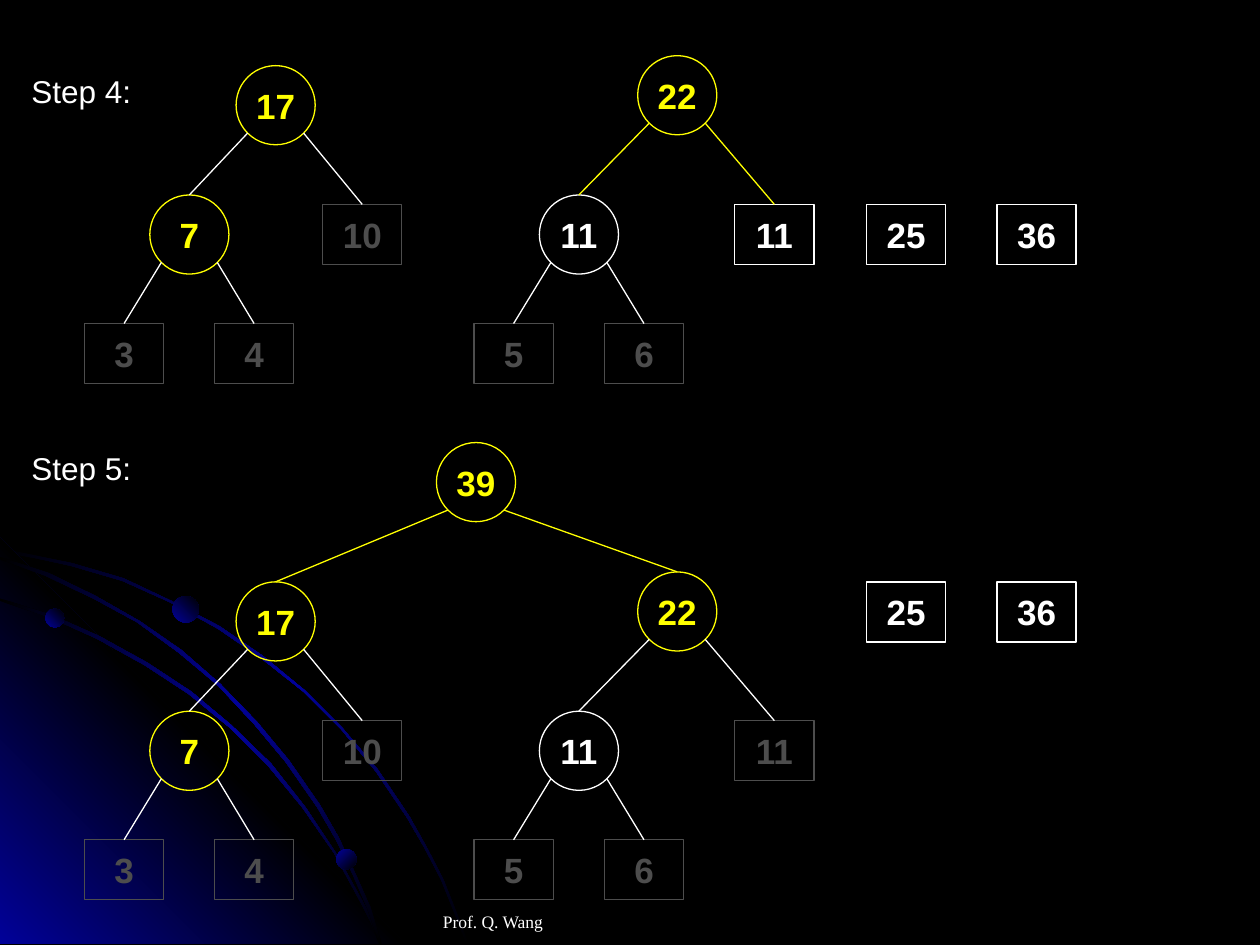
from copy import deepcopy

from lxml import etree
from pptx import Presentation
from pptx.dml.color import RGBColor
from pptx.enum import shapes as kinds, text as t
from pptx.oxml.ns import qn
from pptx.util import Pt

THEME = {
    "background": "000000", "glow": "010199", "white": "FFFFFF",
    "yellow": "FFFF00", "grey": "4D4D4D", "line": 0.75,
    "sans": "Arial", "serif": "Times New Roman",
    "label": 18, "node": 20, "footer": 10,
}
NODE_WIDTH, LEAF_HEIGHT = 45.2, 34.2
DIAGONAL = 0.5 ** 0.5
OVAL, RECT = kinds.MSO_SHAPE.OVAL, kinds.MSO_SHAPE.RECTANGLE

# Tree nodes: key -> (weight, centre x, top), tops as in step 4
INNER = {
    "a": ("7", 108.2, 111.4), "b": ("11", 330.8, 111.4),
    "c": ("17", 157.5, 37.5), "d": ("22", 387, 31.8),
}
LEAVES = {
    "3": ("3", 70.9, 184.9), "4": ("4", 145.2, 184.9),
    "5": ("5", 293.5, 184.9), "6": ("6", 368, 184.9),
    "10": ("10", 207, 116.8), "11": ("11", 442.5, 116.8),
}
QUEUE = [("25", 517.8), ("36", 592.3)]
CHILDREN = {"a": "3 4", "b": "5 6", "c": "a 10", "d": "b 11", "root": "c d"}
ROOT = ("39", 272, 252.9)

STEPS = [
    {"label": "Step 4:", "label_top": 37.4, "shift": 0, "queue_top": 116.8,
     "newest": "d", "white": ["b", "11"], "root": {}},
    {"label": "Step 5:", "label_top": 252.9, "shift": 295, "queue_top": 332.6,
     "newest": "root", "white": ["b"], "root": {"root": ROOT}},
]

# Background decoration: outlines of the three arcs and the corner glow
OUTER_ARC = [
    (0, 315.4), (20.2, 319), (40.3, 323.3), (69.8, 331.9), (97.2, 344.2),
    (124.6, 359.3), (149.8, 376.6), (173.5, 395.3), (195.1, 416.9),
    (214.6, 440.6), (232.6, 467.3), (242.6, 484.6), (252, 502.6),
    (259.2, 520.6), (266.4, 539.3), (267.8, 539.3), (260.6, 520.6),
    (253.4, 502.6), (244.1, 484.6), (234, 466.6), (216, 439.9),
    (195.8, 416.2), (174.2, 394.6), (150.5, 375.1), (125.3, 357.8),
    (97.9, 343.4), (70.6, 330.5), (41, 321.8), (20.2, 317.5), (0, 313.2)]
CORNER = [(231.8, 539.3), (0, 539.3), (0, 307.4)]
INNER_ARC = [
    (205.2, 514.1), (211.7, 527), (216.7, 539.3), (218.2, 539.3),
    (213.1, 525.6), (205.9, 512.6), (191.5, 486.7), (174.2, 460.8),
    (154.8, 436.3), (132.5, 414.7), (109.4, 395.3), (84.2, 378.7),
    (56.9, 363.6), (29.5, 351.4), (0, 342), (0, 343.4), (28.1, 352.8),
    (55.4, 365), (82.8, 380.2), (108, 396.7), (131.8, 416.2),
    (153.4, 437.8), (172.8, 461.5), (190.8, 487.4)]
MIDDLE_ARC = [
    (0, 318.2), (0, 319.7), (25.9, 329), (53.3, 342), (78.5, 355.7),
    (102.2, 373), (124.6, 391.7), (145.4, 414), (163.4, 435.6),
    (181.4, 461.5), (192.2, 480.2), (201.6, 499.7), (210.2, 519.8),
    (216.7, 539.3), (218.2, 539.3), (211.7, 518.4), (203, 499),
    (193.7, 478.8), (182.9, 460.1), (164.9, 434.2), (146.9, 412.6),
    (126, 391), (103.7, 371.5), (79.9, 355), (54.7, 340.6), (28.1, 327.6)]
FADE_ENDS = ["background", "glow", "background"]
FADE_MIDDLE = ["glow", "background", "glow"]
# Gradient angles run counter-clockwise
OUTLINES = [(OUTER_ARC, FADE_ENDS, 315), (CORNER, FADE_MIDDLE, 45),
            (INNER_ARC, FADE_ENDS, 315), (MIDDLE_ARC, FADE_ENDS, 315)]
DOTS = [(25.9, 347.8, 10.8, 45), (192.2, 485.3, 11.5, 315),
        (98.6, 340.6, 15.1, 45)]


def color(name):
    return RGBColor.from_string(THEME[name])


def set_all(target, values):
    for name, value in values.items():
        setattr(target, name, value)


def paint_gradient(shape, names, angle):
    """Fill with evenly spaced theme colours and no outline."""
    shape.shadow.inherit = False
    shape.line.fill.background()
    shape.fill.gradient()
    shape.fill.gradient_angle = angle
    stop_list = shape._element.spPr.find(".//" + qn("a:gsLst"))
    for _ in names[2:]:
        stop_list.append(deepcopy(stop_list[-1]))
    for i, (stop, name) in enumerate(zip(shape.fill.gradient_stops, names)):
        stop.position = i / (len(names) - 1)
        stop.color.rgb = color(name)


def write(shape, words, ink, font, frame, align):
    set_all(shape.text_frame, frame)
    line = shape.text_frame.paragraphs[0]
    line.alignment = align
    run = line.add_run()
    run.text = words
    set_all(run.font, font)
    run.font.color.rgb = color(ink)


def add_text(slide, box, words, size, face, frame, align):
    area = slide.shapes.add_textbox(*map(Pt, box))
    font = {"size": Pt(THEME[size]), "name": THEME[face]}
    write(area, words, "white", font, frame, align)


def add_node(slide, kind, weight, center, top, ink):
    height = NODE_WIDTH if kind == OVAL else LEAF_HEIGHT
    box = (center - NODE_WIDTH / 2, top, NODE_WIDTH, height)
    node = slide.shapes.add_shape(kind, *map(Pt, box))
    node.shadow.inherit = False
    node.fill.background()
    node.line.color.rgb = color(ink)
    node.line.width = Pt(THEME["line"])
    font = {"size": Pt(THEME["node"]), "name": THEME["sans"], "bold": True}
    frame = {"word_wrap": False, "vertical_anchor": t.MSO_ANCHOR.MIDDLE}
    write(node, weight, ink, font, frame, t.PP_ALIGN.CENTER)
    return node


def add_branch(slide, parent, child, side, ink):
    """Run from the parent's lower diagonal (side -1 left, 1 right) to the child's top."""
    radius = parent.width / 2
    x = int(parent.left + radius * (1 + side * DIAGONAL))
    y = int(parent.top + radius * (1 + DIAGONAL))
    branch = slide.shapes.add_connector(kinds.MSO_CONNECTOR.STRAIGHT, x, y, x, y)
    branch.end_connect(child, 0)
    branch.line.color.rgb = color(ink)
    branch.line.width = Pt(THEME["line"])
    etree.SubElement(branch._element.spPr, qn("a:effectLst"))


def add_decoration(slide):
    for points, names, angle in OUTLINES:
        start, *rest = [(Pt(x), Pt(y)) for x, y in points]
        outline = slide.shapes.build_freeform(*start)
        outline.add_line_segments(rest, close=True)
        paint_gradient(outline.convert_to_shape(), names, angle)
    for left, top, size, angle in DOTS:
        dot = slide.shapes.add_shape(OVAL, Pt(left), Pt(top), Pt(size), Pt(size))
        paint_gradient(dot, FADE_ENDS[1:], angle)


def add_step(slide, step):
    add_text(slide, (10.8, step["label_top"], 71.3, 28.8), step["label"], "label", "sans",
             {"word_wrap": False, "auto_size": t.MSO_AUTO_SIZE.SHAPE_TO_FIT_TEXT},
             t.PP_ALIGN.CENTER)
    nodes = {}
    for kind, group, usual in ((RECT, LEAVES, "grey"), (OVAL, INNER, "yellow")):
        for key, (weight, center, top) in group.items():
            ink = "white" if key in step["white"] else usual
            nodes[key] = add_node(slide, kind, weight, center, top + step["shift"], ink)
    for key, root in step["root"].items():
        nodes[key] = add_node(slide, OVAL, *root, "yellow")
    for weight, center in QUEUE:
        add_node(slide, RECT, weight, center, step["queue_top"], "white")
    for parent in nodes.keys() & CHILDREN.keys():
        ink = "yellow" if parent == step["newest"] else "white"
        for side, child in zip((-1, 1), CHILDREN[parent].split()):
            add_branch(slide, nodes[parent], nodes[child], side, ink)


def main():
    deck = Presentation()
    deck.slide_width, deck.slide_height = Pt(720), Pt(540)
    slide = deck.slides.add_slide(deck.slide_layouts[6])
    slide.background.fill.solid()
    slide.background.fill.fore_color.rgb = color("background")
    add_decoration(slide)
    add_text(slide, (246, 496.8, 228, 36), "Prof. Q. Wang", "footer", "serif",
             {"word_wrap": True, "vertical_anchor": t.MSO_ANCHOR.BOTTOM,
              "margin_bottom": 0}, t.PP_ALIGN.LEFT)
    for step in STEPS:
        add_step(slide, step)
    deck.save("out.pptx")


if __name__ == "__main__":
    main()
